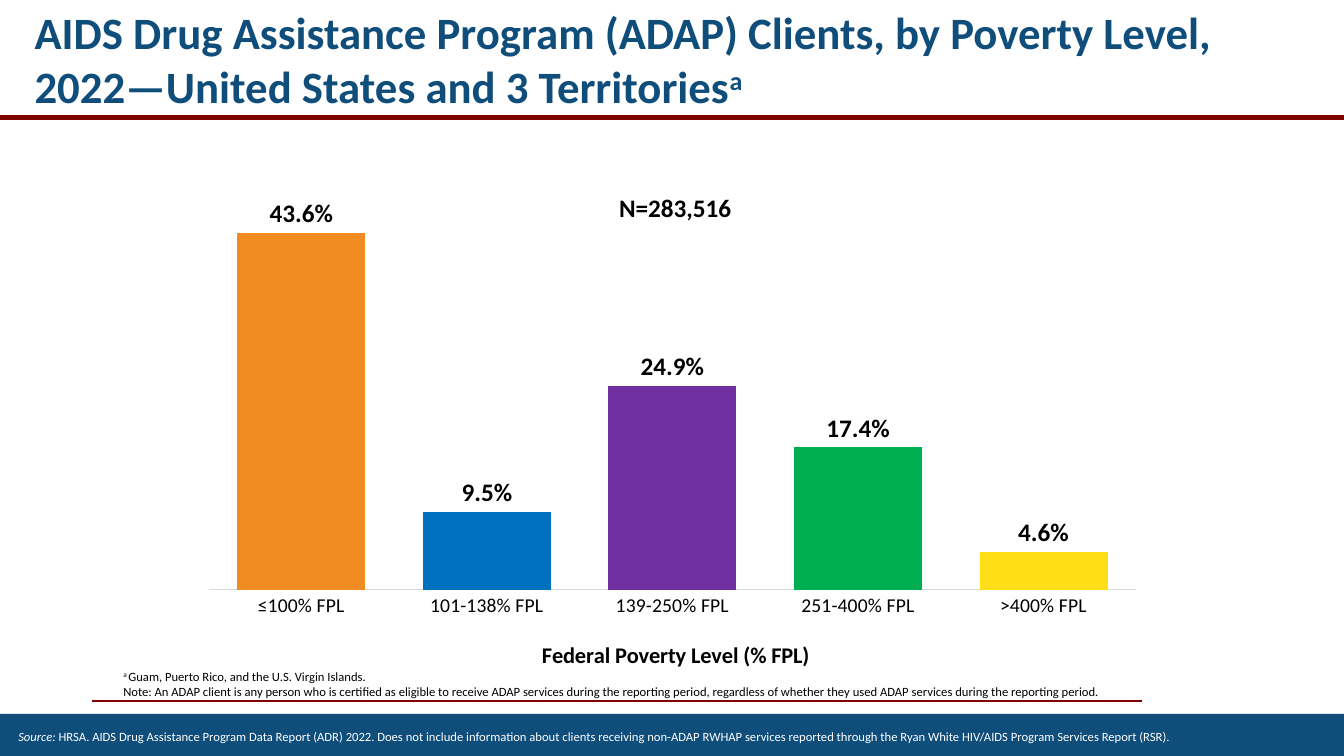
from lxml import etree
from pptx import Presentation
from pptx.chart.data import CategoryChartData
from pptx.dml.color import RGBColor
from pptx.enum.chart import XL_CHART_TYPE as ChartType, XL_LABEL_POSITION as LabelPosition, XL_TICK_MARK as TickMark
from pptx.enum.shapes import MSO_CONNECTOR as Connector, MSO_SHAPE as Shape
from pptx.enum.text import MSO_ANCHOR as Anchor, MSO_AUTO_SIZE as AutoSize, PP_ALIGN as Align
from pptx.oxml.ns import qn
from pptx.util import Pt

NAVY = RGBColor(0x0F, 0x4D, 0x7B)
MAROON = RGBColor(0x80, 0x00, 0x00)
AXIS_GRAY = RGBColor(0xD9, 0xD9, 0xD9)
BLACK = RGBColor(0, 0, 0)
WHITE = RGBColor(0xFF, 0xFF, 0xFF)
FONT = "Calibri"

# Content: each paragraph is a list of (text, style) runs
TITLE = [("AIDS Drug Assistance Program (ADAP) Clients, by Poverty Level, "
          "2022—United States and 3 Territories", ""), ("a", "super")]
FOOTNOTES = [
    [("a ", "super"), ("Guam, Puerto Rico, and the U.S. Virgin Islands.", "")],
    [("Note: An ADAP client is any person who is certified as eligible to receive ADAP services "
      "during the reporting period, regardless of whether they used ADAP services during the "
      "reporting period.", "")],
]
SOURCE = [("Source: ", "italic"),
          ("HRSA. AIDS Drug Assistance Program Data Report (ADR) 2022. Does not include information "
           "about clients receiving non-ADAP RWHAP services reported through the Ryan White HIV/AIDS "
           "Program Services Report (RSR).", "")]
CLIENT_TOTAL = "N=283,516"
AXIS_TITLE = "Federal Poverty Level (% FPL)"
POVERTY_LEVELS = [
    ("≤100% FPL", 0.436, RGBColor(0xF1, 0x8C, 0x22)),
    ("101-138% FPL", 0.095, RGBColor(0x00, 0x70, 0xC0)),
    ("139-250% FPL", 0.249, RGBColor(0x70, 0x30, 0xA0)),
    ("251-400% FPL", 0.174, RGBColor(0x00, 0xB0, 0x50)),
    (">400% FPL", 0.046, RGBColor(0xFF, 0xDE, 0x17)),
]

SLIDE_W, SLIDE_H = 960, 540
HEADER_H, FOOTER_H = 84, 30

prs = Presentation()
prs.slide_width, prs.slide_height = Pt(SLIDE_W), Pt(SLIDE_H)
slide = prs.slides.add_slide(prs.slide_layouts[5])
shapes = slide.shapes


def style_font(font, size, color=BLACK, bold=False):
    font.name, font.size, font.bold = FONT, Pt(size), bold
    font.color.rgb = color


def write(frame, paragraphs, size, color=BLACK, bold=False):
    frame.word_wrap = True
    for i, runs in enumerate(paragraphs):
        para = frame.add_paragraph() if i else frame.paragraphs[0]
        para.alignment = Align.LEFT
        style_font(para.font, size, color, bold)
        for text, style in runs:
            run = para.add_run()
            run.text = text
            if style == "italic":
                run.font.italic = True
            elif style == "super":
                run._r.get_or_add_rPr().set("baseline", "30000")


def add_rule(left, right, y, width):
    rule = shapes.add_connector(Connector.STRAIGHT, Pt(left), Pt(y), Pt(right), Pt(y))
    rule.line.color.rgb, rule.line.width = MAROON, Pt(width)
    etree.SubElement(rule._element.spPr, qn("a:effectLst"))


def set_layout(parent, index, **values):
    for old in parent.findall(qn("c:layout")):
        parent.remove(old)
    layout = etree.Element(qn("c:layout"))
    manual = etree.SubElement(layout, qn("c:manualLayout"))
    for tag, value in values.items():
        etree.SubElement(manual, qn("c:" + tag)).set("val", str(value))
    parent.insert(index, layout)


def set_chart_title(title, text, size, x, y):
    para = title.text_frame.paragraphs[0]
    para.text = text
    style_font(para.font, size, bold=True)
    set_layout(title._element, 1, xMode="edge", yMode="edge", x=x, y=y)


# Rules and footer band
add_rule(66, 816, 500.5, 1.5)
footer = shapes.add_shape(Shape.RECTANGLE, 0, Pt(SLIDE_H - FOOTER_H), Pt(SLIDE_W), Pt(FOOTER_H))
footer.shadow.inherit = False
footer.fill.solid()
footer.fill.fore_color.rgb = NAVY
footer.line.fill.background()
add_rule(0, SLIDE_W, HEADER_H, 3)

# Title
title = shapes.title
title.left, title.top, title.width, title.height = Pt(17.5), Pt(0), Pt(927), Pt(HEADER_H)
title.text_frame.auto_size = AutoSize.NONE
title.text_frame.vertical_anchor = Anchor.MIDDLE
write(title.text_frame, [TITLE], 32, NAVY, bold=True)

# Source and footnotes
source = shapes.add_textbox(Pt(6), Pt(517), Pt(883), Pt(18))
write(source.text_frame, [SOURCE], 9, WHITE)
footnotes = shapes.add_textbox(Pt(81), Pt(474), Pt(731.5), Pt(40))
write(footnotes.text_frame, FOOTNOTES, 9)

# Chart
data = CategoryChartData(number_format="0.0%")
data.categories = [level for level, _, _ in POVERTY_LEVELS]
data.add_series("Series 1", [share for _, share, _ in POVERTY_LEVELS])
chart = shapes.add_chart(ChartType.COLUMN_CLUSTERED, Pt(138), Pt(118), Pt(684), Pt(369.5), data).chart
style_font(chart.font, 10)
chart.has_legend = False
set_chart_title(chart.chart_title, CLIENT_TOTAL, 18, 0.44, 0.04)
set_layout(chart._chartSpace.chart.plotArea, 0, layoutTarget="inner", xMode="edge", yMode="edge",
           x=0.016, y=0.03, w=0.969, h=0.791)

# Axes
levels_axis, share_axis = chart.category_axis, chart.value_axis
levels_axis.major_tick_mark = levels_axis.minor_tick_mark = TickMark.NONE
levels_axis.format.line.color.rgb, levels_axis.format.line.width = AXIS_GRAY, Pt(0.75)
style_font(levels_axis.tick_labels.font, 14)
set_chart_title(levels_axis.axis_title, AXIS_TITLE, 16, 0.36, 0.91)
share_axis.minimum_scale, share_axis.maximum_scale = 0, 0.5
share_axis.has_major_gridlines = False
share_axis.visible = False

# Columns and labels
plot = chart.plots[0]
plot.gap_width, plot.overlap, plot.vary_by_categories = 45, -27, False
shares = plot.series[0]
for i, (_, _, color) in enumerate(POVERTY_LEVELS):
    fill = shares.points[i].format.fill
    fill.solid()
    fill.fore_color.rgb = color
labels = shares.data_labels
labels.show_value = True
labels.number_format, labels.number_format_is_linked = "0.0%", False
labels.position = LabelPosition.OUTSIDE_END
style_font(labels.font, 18, bold=True)

prs.save("out.pptx")
